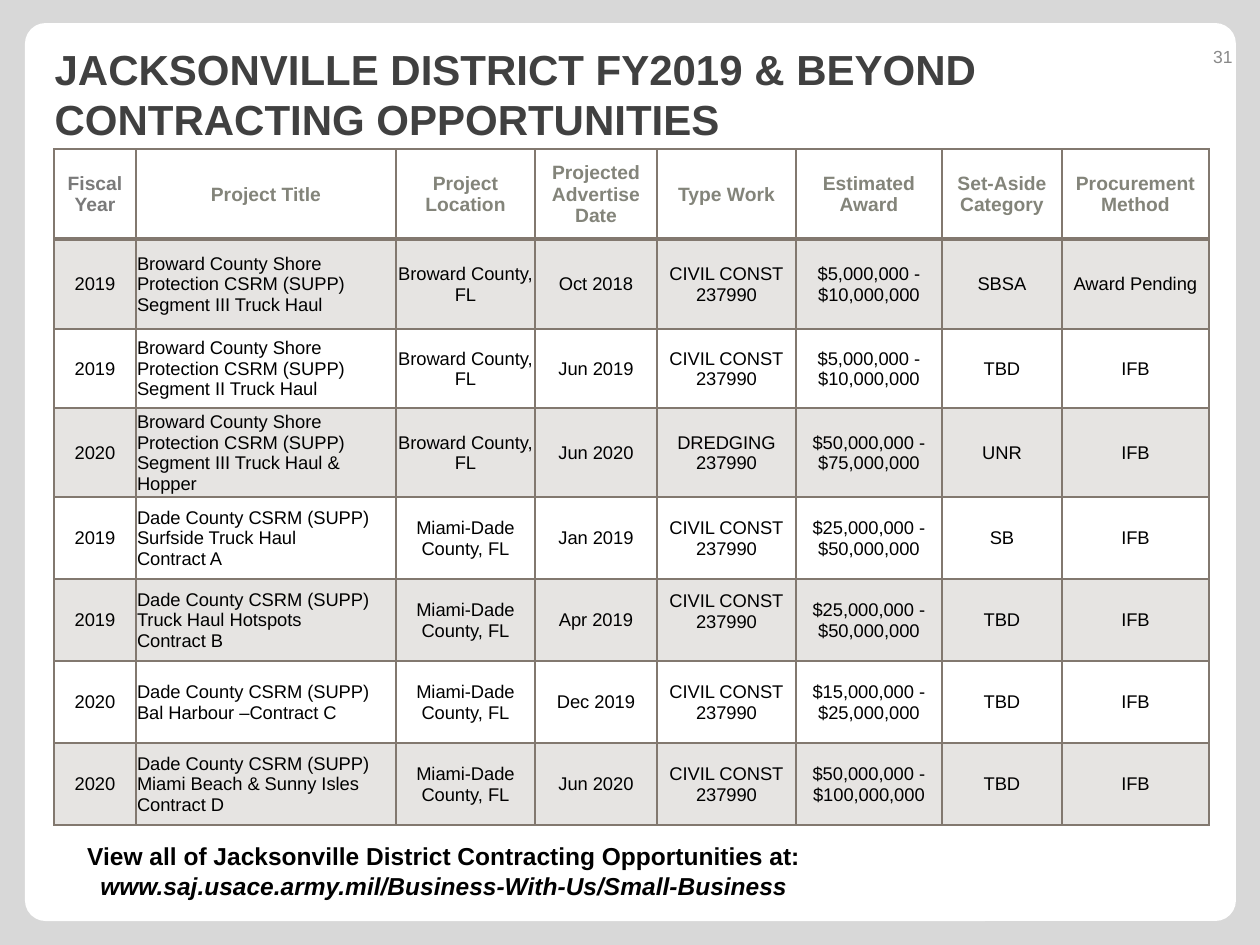
from lxml.etree import SubElement
from pptx import Presentation
from pptx.dml.color import RGBColor
from pptx.enum.shapes import MSO_SHAPE as Shape
from pptx.enum.text import MSO_ANCHOR as Anchor, MSO_AUTO_SIZE as AutoSize, PP_ALIGN as Align
from pptx.oxml.ns import qn
from pptx.util import Emu, Pt

PX = 914400 / 126
TAUPE = "82786F"


def px(*lengths):
    return [Emu(round(length * PX)) for length in lengths]


def style(paragraph, align, color, **font_values):
    paragraph.alignment = align
    for key, value in {"name": "Arial", **font_values}.items():
        setattr(paragraph.font, key, value)
    paragraph.font.color.rgb = RGBColor.from_string(color)


deck = Presentation()
deck.slide_width, deck.slide_height = px(1260, 945)
slide = deck.slides.add_slide(deck.slide_layouts[5])
shapes = slide.shapes

# Grey page with a rounded white panel behind everything
slide.background.fill.solid()
slide.background.fill.fore_color.rgb = RGBColor.from_string("D8D8D8")
panel = shapes.add_shape(Shape.ROUNDED_RECTANGLE, *px(25, 23, 1211, 898))
panel.adjustments[0] = 0.023
panel.shadow.inherit = False
panel.fill.solid()
panel.fill.fore_color.rgb = RGBColor.from_string("FFFFFF")
panel.line.fill.background()
shapes._spTree.insert(2, panel._element)

# Title
title = shapes.title
title.left, title.top, title.width, title.height = px(42, 38, 1155, 111)
heading = title.text_frame
heading.text = "JACKSONVILLE DISTRICT FY2019 & BEYOND CONTRACTING OPPORTUNITIES"
heading.word_wrap = True
heading.auto_size = AutoSize.NONE
heading.vertical_anchor = Anchor.MIDDLE
style(heading.paragraphs[0], Align.LEFT, "404040", size=Pt(24), bold=True)

# Page number
page_number = shapes.add_textbox(*px(1144, 32, 101, 50)).text_frame
page_number.text = "31"
page_number.word_wrap = True
page_number.vertical_anchor = Anchor.MIDDLE
style(page_number.paragraphs[0], Align.RIGHT, "898989", size=Pt(10))

# Opportunities: a line break in a cell starts a new paragraph
BROWARD = "Broward County Shore Protection CSRM (SUPP)\n"
DADE = "Dade County CSRM (SUPP) "
IN_BROWARD, IN_DADE = "Broward County, FL", "Miami-Dade County, FL"
CIVIL = "CIVIL CONST\n237990"
opportunities = [
    ("Fiscal Year", "Project Title", "Project Location", "Projected Advertise Date",
     "Type Work", "Estimated Award", "Set-Aside Category", "Procurement Method"),
    ("2019", BROWARD + "Segment III Truck Haul", IN_BROWARD, "Oct 2018",
     CIVIL, "$5,000,000 - $10,000,000", "SBSA", "Award Pending"),
    ("2019", BROWARD + "Segment II Truck Haul", IN_BROWARD, "Jun 2019",
     CIVIL, "$5,000,000 - $10,000,000", "TBD", "IFB"),
    ("2020", BROWARD + "Segment III Truck Haul & Hopper", IN_BROWARD, "Jun 2020",
     "DREDGING 237990", "$50,000,000 - $75,000,000", "UNR", "IFB"),
    ("2019", DADE + "Surfside Truck Haul\nContract A", IN_DADE, "Jan 2019",
     CIVIL, "$25,000,000 - $50,000,000", "SB", "IFB"),
    ("2019", DADE + "Truck Haul Hotspots\nContract B", IN_DADE, "Apr 2019",
     CIVIL, "$25,000,000 - $50,000,000", "TBD", "IFB"),
    ("2020", DADE + "Bal Harbour –Contract C", IN_DADE, "Dec 2019",
     CIVIL, "$15,000,000 - $25,000,000", "TBD", "IFB"),
    ("2020", DADE + "Miami Beach & Sunny Isles\nContract D", IN_DADE, "Jun 2020",
     CIVIL, "$50,000,000 - $100,000,000", "TBD", "IFB"),
]
column_widths = px(82, 260, 139, 122, 139, 146, 120, 147)
row_heights = px(90, 90, 79, 68, 82, 82, 82, 82)
table = shapes.add_table(len(row_heights), len(column_widths), *px(54, 149, 1155, 655)).table
table.first_row = table.horz_banding = False
for column, width in zip(table.columns, column_widths):
    column.width = width
for row, height in zip(table.rows, row_heights):
    row.height = height

for r, opportunity in enumerate(opportunities):
    for c, words in enumerate(opportunity):
        cell = table.cell(r, c)
        cell.text = words
        cell.vertical_anchor = Anchor.MIDDLE
        cell.margin_left, cell.margin_top, cell.margin_right, cell.margin_bottom = px(1, 1, 1, 0)
        if (r, c) == (5, 4):  # this entry sits higher than its row
            cell.margin_bottom = px(18)[0]

        # Header and body text
        for paragraph in cell.text_frame.paragraphs:
            if r == 0:
                style(paragraph, Align.CENTER, "83847A" if c else "7A7A7A", size=Pt(11), bold=True)
            else:
                style(paragraph, Align.LEFT if c == 1 else Align.CENTER, "000000",
                      size=Pt(10.5), bold=False)

        # Borders, with a heavier rule under the header
        properties = cell._tc.get_or_add_tcPr()
        for side in ("lnL", "lnR", "lnT", "lnB"):
            heavy = (r, side) in ((0, "lnB"), (1, "lnT"))
            border = SubElement(properties, qn(f"a:{side}"), w=str(Pt(2 if heavy else 1)))
            SubElement(SubElement(border, qn("a:solidFill")), qn("a:srgbClr"), val=TAUPE)

        # Every other row is tinted
        if r % 2:
            cell.fill.solid()
            cell.fill.fore_color.rgb = RGBColor.from_string(TAUPE)
            tint = properties.find(qn("a:solidFill")).find(qn("a:srgbClr"))
            SubElement(tint, qn("a:alpha"), val="20000")
        else:
            cell.fill.background()

# Where to find the full list
more = shapes.add_textbox(*px(54, 835, 780, 72)).text_frame
more.text = ("View all of Jacksonville District Contracting Opportunities at:\n"
             "www.saj.usace.army.mil/Business-With-Us/Small-Business")
more.word_wrap = True
more.auto_size = AutoSize.SHAPE_TO_FIT_TEXT
for paragraph, italic in zip(more.paragraphs, (False, True)):
    style(paragraph, Align.CENTER, "000000", size=Pt(14), bold=True, italic=italic)

deck.save("out.pptx")
